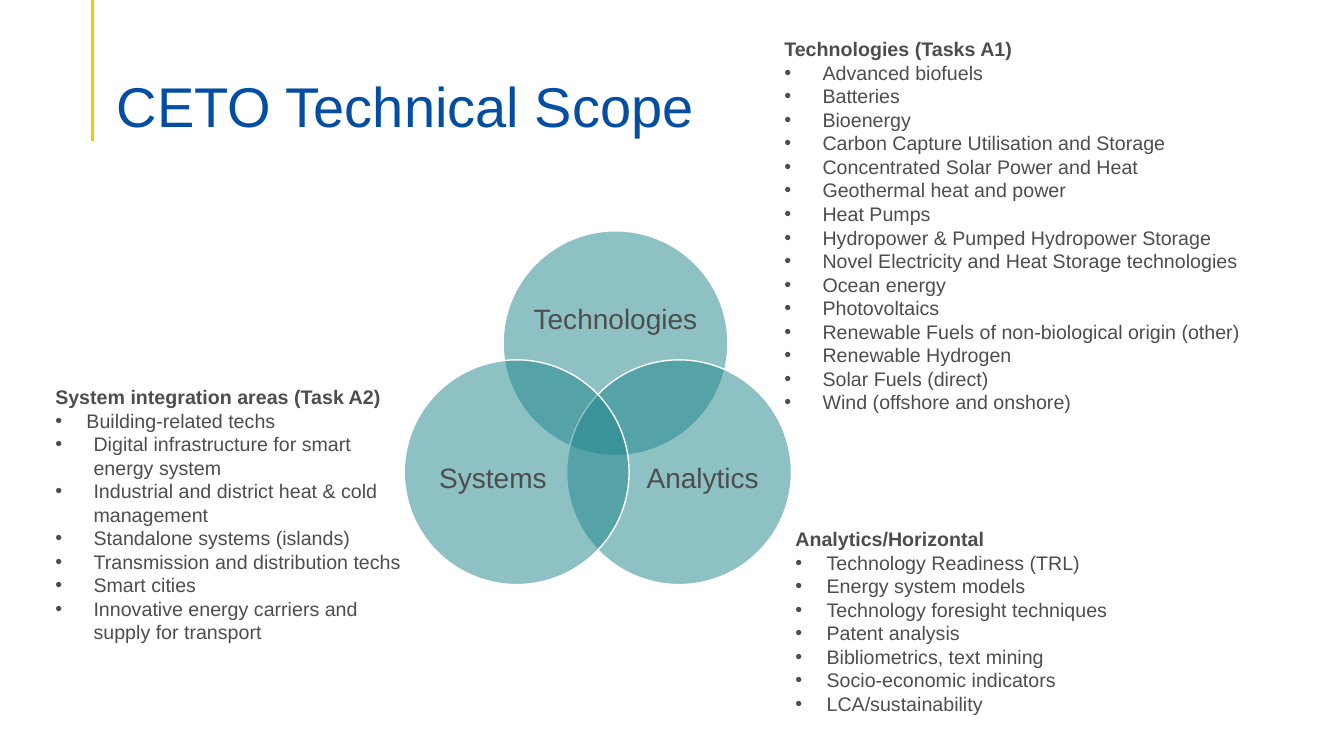
from lxml import etree
from pptx import Presentation
from pptx import util as u
from pptx.dml.color import RGBColor
from pptx.enum import shapes, text
from pptx.oxml.ns import qn

TITLE = "CETO Technical Scope"

# Each list: left, top, width, height, heading, usual indent, items
LISTS = [
    (7.68, 0.32, 4.72, 3.87, "Technologies (Tasks A1)", 0.38, [
        "Advanced biofuels",
        "Batteries",
        "Bioenergy",
        "Carbon Capture Utilisation and Storage",
        "Concentrated Solar Power and Heat",
        "Geothermal heat and power",
        "Heat Pumps",
        "Hydropower & Pumped Hydropower Storage",
        "Novel Electricity and Heat Storage technologies",
        "Ocean energy",
        "Photovoltaics",
        "Renewable Fuels of non-biological origin (other)",
        "Renewable Hydrogen",
        "Solar Fuels (direct)",
        "Wind (offshore and onshore)",
    ]),
    (0.45, 3.77, 3.67, 3.16, "System integration areas (Task A2)", 0.38, [
        "Building-related techs",
        "Digital infrastructure for smart energy system",
        "Industrial and district heat & cold management",
        "Standalone systems (islands)",
        "Transmission and distribution techs",
        "Smart cities",
        "Innovative energy carriers and supply for transport",
    ]),
    (7.79, 5.18, 4.05, 1.99, "Analytics/Horizontal", 0.31, [
        "Technology Readiness (TRL)",
        "Energy system models",
        "Technology foresight techniques",
        "Patent analysis",
        "Bibliometrics, text mining",
        "Socio-economic indicators",
        "LCA/sustainability",
    ]),
]
SPECIAL_INDENTS = {"Building-related techs": 0.31}

# Each circle: left, top, label, label box
DIAMETER = 2.23
CIRCLES = [
    (4.99, 2.29, "Technologies", (5.29, 2.68, 1.63, 1)),
    (5.62, 3.57, "Analytics", (6.3, 4.14, 1.34, 1.23)),
    (4.01, 3.57, "Systems", (4.22, 4.14, 1.34, 1.23)),
]

FONT = "Arial"
BLUE = RGBColor(0x03, 0x4E, 0xA2)
GREY = RGBColor(0x4D, 0x4D, 0x4D)
TEAL = RGBColor(0x1E, 0x85, 0x8B)
YELLOW = RGBColor(0xFF, 0xC0, 0x00)
WHITE = RGBColor(0xFF, 0xFF, 0xFF)


def inches(*lengths):
    return [u.Inches(length) for length in lengths]


def set_margins(frame, left, top, right, bottom):
    frame.margin_left, frame.margin_top, frame.margin_right, frame.margin_bottom = inches(
        left, top, right, bottom)


def set_font(paragraph, size, color, bold=False):
    font = paragraph.font
    font.name, font.size, font.bold = FONT, u.Pt(size), bold
    font.color.rgb = color


def add_bullet(paragraph, indent):
    properties = paragraph._p.get_or_add_pPr()
    properties.set("marL", str(u.Inches(indent)))
    properties.set("indent", str(-u.Inches(indent)))
    etree.SubElement(properties, qn("a:buFont")).set("typeface", FONT)
    etree.SubElement(properties, qn("a:buChar")).set("char", "•")


def add_title(slide):
    title = slide.shapes.title
    title.left, title.top, title.width, title.height = inches(1.06, 0.53, 11.5, 0.86)
    frame = title.text_frame
    frame.text = TITLE
    frame.auto_size = text.MSO_AUTO_SIZE.NONE
    frame.vertical_anchor = text.MSO_ANCHOR.BOTTOM
    set_margins(frame, 0.1, 0.05, 0.1, 0)
    paragraph = frame.paragraphs[0]
    paragraph.alignment = text.PP_ALIGN.LEFT
    paragraph.line_spacing = 0.9
    set_font(paragraph, 40, BLUE)


def add_accent_line(slide):
    line = slide.shapes.add_connector(
        shapes.MSO_CONNECTOR.STRAIGHT, *inches(0.92, 0, 0.92, 1.4))
    line.line.color.rgb = YELLOW
    line.line.width = u.Pt(2.25)
    etree.SubElement(line._element.spPr, qn("a:effectLst"))


def add_list(slide, left, top, width, height, heading, indent, items):
    frame = slide.shapes.add_textbox(*inches(left, top, width, height)).text_frame
    frame.word_wrap = True
    frame.auto_size = text.MSO_AUTO_SIZE.SHAPE_TO_FIT_TEXT
    paragraph = frame.paragraphs[0]
    paragraph.text = heading
    set_font(paragraph, 14, GREY, bold=True)
    for item in items:
        paragraph = frame.add_paragraph()
        paragraph.text = item
        add_bullet(paragraph, SPECIAL_INDENTS.get(item, indent))
        set_font(paragraph, 14, GREY)


def add_circle(slide, left, top, label, label_box):
    circle = slide.shapes.add_shape(
        shapes.MSO_SHAPE.OVAL, *inches(left, top, DIAMETER, DIAMETER))
    circle.shadow.inherit = False
    circle.fill.solid()
    circle.fill.fore_color.rgb = TEAL
    color = circle._element.spPr.find(qn("a:solidFill")).find(qn("a:srgbClr"))
    etree.SubElement(color, qn("a:alpha")).set("val", "50000")
    circle.line.color.rgb = WHITE
    circle.line.width = u.Pt(1)

    frame = slide.shapes.add_textbox(*inches(*label_box)).text_frame
    frame.word_wrap = True
    frame.vertical_anchor = text.MSO_ANCHOR.MIDDLE
    set_margins(frame, 0, 0, 0, 0)
    paragraph = frame.paragraphs[0]
    paragraph.text = label
    paragraph.alignment = text.PP_ALIGN.CENTER
    paragraph.line_spacing = 0.9
    set_font(paragraph, 20, GREY)


def main():
    presentation = Presentation()
    presentation.slide_width, presentation.slide_height = inches(13.33, 7.5)
    slide = presentation.slides.add_slide(presentation.slide_layouts[5])

    # Heading
    add_title(slide)
    add_accent_line(slide)

    # Bulleted lists
    for entry in LISTS:
        add_list(slide, *entry)

    # Venn diagram
    for entry in CIRCLES:
        add_circle(slide, *entry)

    presentation.save("out.pptx")


if __name__ == "__main__":
    main()
